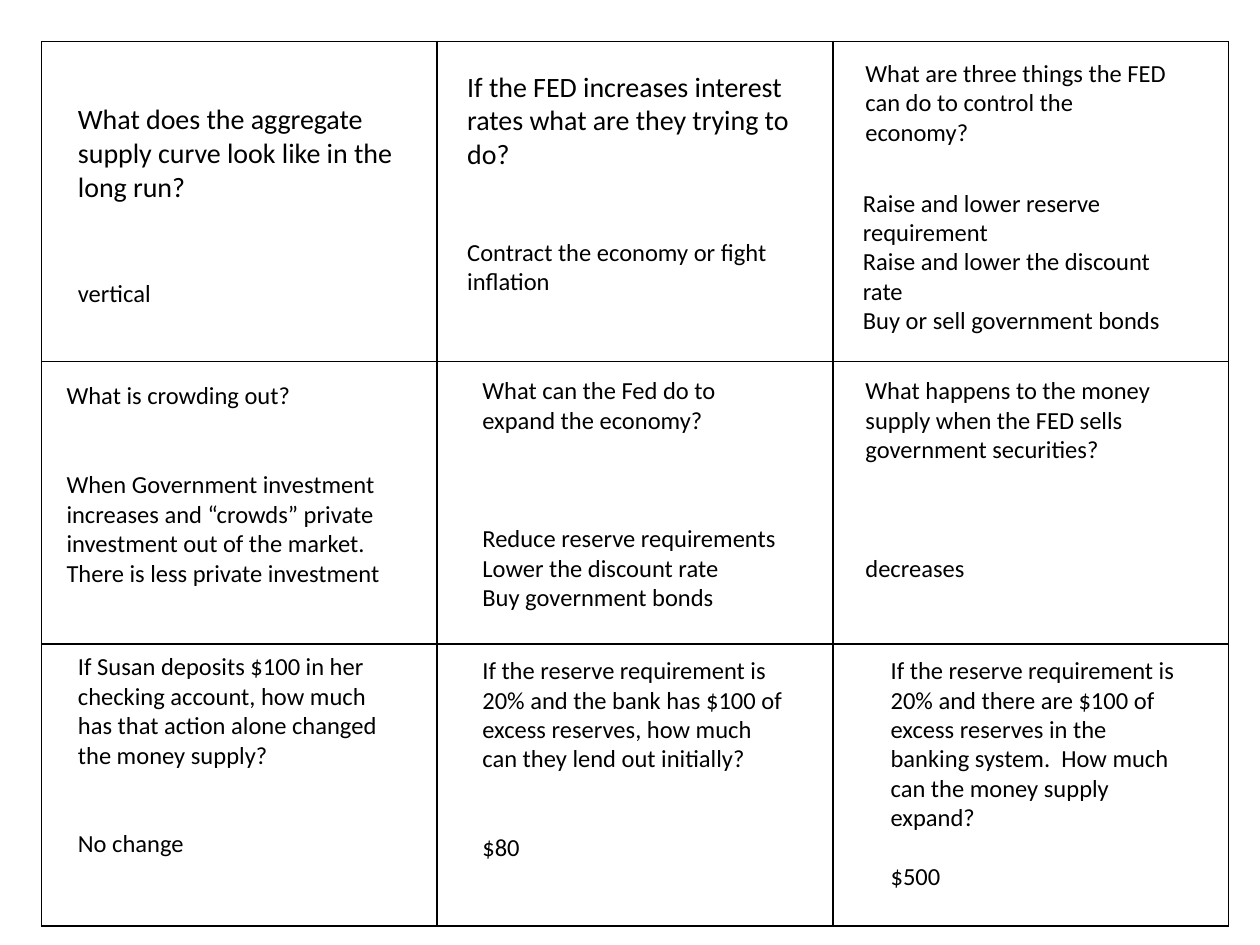
from lxml import etree
from pptx import Presentation
from pptx.dml.color import RGBColor
from pptx.enum import text as t
from pptx.oxml import ns
from pptx.util import Inches, Pt

BLACK = RGBColor(0, 0, 0)
FONT = "Calibri"
BLANK_LINE = 17
GRID_LEFT, GRID_TOP = 0.33, 0.33
COLUMN_WIDTH = 3.14
ROW_HEIGHTS = [2.54, 2.24, 2.24]

# Each note: row, column, (x, y, width, height) within its cell, size, blank lines before answer, question, answers
NOTES = [
    (0, 0, (0.19, 0.43, 2.89, 0.91), 16, 0,
     ["What does the aggregate supply curve look like in the long run?"], []),
    (0, 0, (0.19, 1.83, 2.71, 0.34), 14, 0, [], ["vertical"]),
    (0, 1, (0.14, 0.17, 3, 0.91), 16, 0,
     ["If the FED increases interest rates what are they trying to do?"], []),
    (0, 1, (0.14, 1.5, 2.71, 0.57), 14, 0, [], ["Contract the economy or fight inflation"]),
    (0, 2, (0.16, 0.08, 2.7, 0.81), 14, 0,
     ["What are three things the FED can do to control the economy?"], []),
    (0, 2, (0.14, 1.11, 2.71, 1.28), 14, 0, [],
     ["Raise and lower reserve requirement", "Raise and lower the discount rate",
      "Buy or sell government bonds"]),
    (1, 0, (0.1, 0.1, 2.9, 1.99), 14, 2, ["What is crowding out?"],
     ["When Government investment increases and “crowds” private investment out of the market.  "
      "There is less private investment"]),
    (1, 1, (0.26, 0.06, 2.58, 1.99), 14, 3, ["What can the Fed do to expand the economy?"],
     ["Reduce reserve requirements", "Lower the discount rate", "Buy government bonds"]),
    (1, 2, (0.16, 0.06, 2.58, 1.75), 14, 3,
     ["What happens to the money supply when the FED sells government securities?"], ["decreases"]),
    (2, 0, (0.19, 0.01, 2.58, 1.75), 14, 2,
     ["If Susan deposits $100 in her checking account, how much has that action alone changed "
      "the money supply?"], ["No change"]),
    (2, 1, (0.26, 0.04, 2.58, 1.75), 14, 2,
     ["If the reserve requirement is 20% and the bank has $100 of excess reserves, how much can "
      "they lend out initially?"], ["$80"]),
    (2, 2, (0.36, 0.04, 2.58, 1.99), 14, 1,
     ["If the reserve requirement is 20% and there are $100 of excess reserves in the banking "
      "system.  How much can the money supply expand?"], ["$500"]),
]


def outline_cell(cell):
    """Clear the cell's fill and give it a thin black border on every side."""
    properties = cell._tc.get_or_add_tcPr()
    for side in ("lnL", "lnR", "lnT", "lnB"):
        border = etree.SubElement(properties, ns.qn(f"a:{side}"), w=str(Pt(1)))
        fill = etree.SubElement(border, ns.qn("a:solidFill"))
        etree.SubElement(fill, ns.qn("a:srgbClr"), val=str(BLACK))
    cell.fill.background()


def add_card_grid(slide, left, top):
    """Draw the empty three by three grid of cards."""
    frame = slide.shapes.add_table(
        3, 3, Inches(left), Inches(top), Inches(3 * COLUMN_WIDTH), Inches(sum(ROW_HEIGHTS)))
    grid = frame.table
    grid.first_row = grid.horz_banding = False
    for column in grid.columns:
        column.width = Inches(COLUMN_WIDTH)
    for row, height in zip(grid.rows, ROW_HEIGHTS):
        row.height = Inches(height)
    for cell in grid.iter_cells():
        outline_cell(cell)


def add_note(slide, cell_left, cell_top, box, size, blank_lines, question, answers):
    """Write a question, its answers or both at a place within one card."""
    x, y, width, height = box
    note = slide.shapes.add_textbox(
        Inches(cell_left + x), Inches(cell_top + y), Inches(width), Inches(height))
    frame = note.text_frame
    frame.word_wrap = True
    frame.auto_size = t.MSO_AUTO_SIZE.SHAPE_TO_FIT_TEXT
    for index, line in enumerate(question + answers):
        paragraph = frame.add_paragraph() if index else frame.paragraphs[0]
        if question and index == len(question):
            paragraph.space_before = Pt(blank_lines * BLANK_LINE)
        run = paragraph.add_run()
        run.text = line
        run.font.name = FONT
        run.font.size = Pt(size)
        run.font.color.rgb = BLACK


def main():
    """Build the sheet of review cards."""
    deck = Presentation()
    deck.slide_width, deck.slide_height = Inches(10), Inches(7.5)
    slide = deck.slides.add_slide(deck.slide_layouts[6])
    add_card_grid(slide, GRID_LEFT, GRID_TOP)
    for row, column, *content in NOTES:
        cell_left = GRID_LEFT + column * COLUMN_WIDTH
        cell_top = GRID_TOP + sum(ROW_HEIGHTS[:row])
        add_note(slide, cell_left, cell_top, *content)
    deck.save("out.pptx")


if __name__ == "__main__":
    main()
